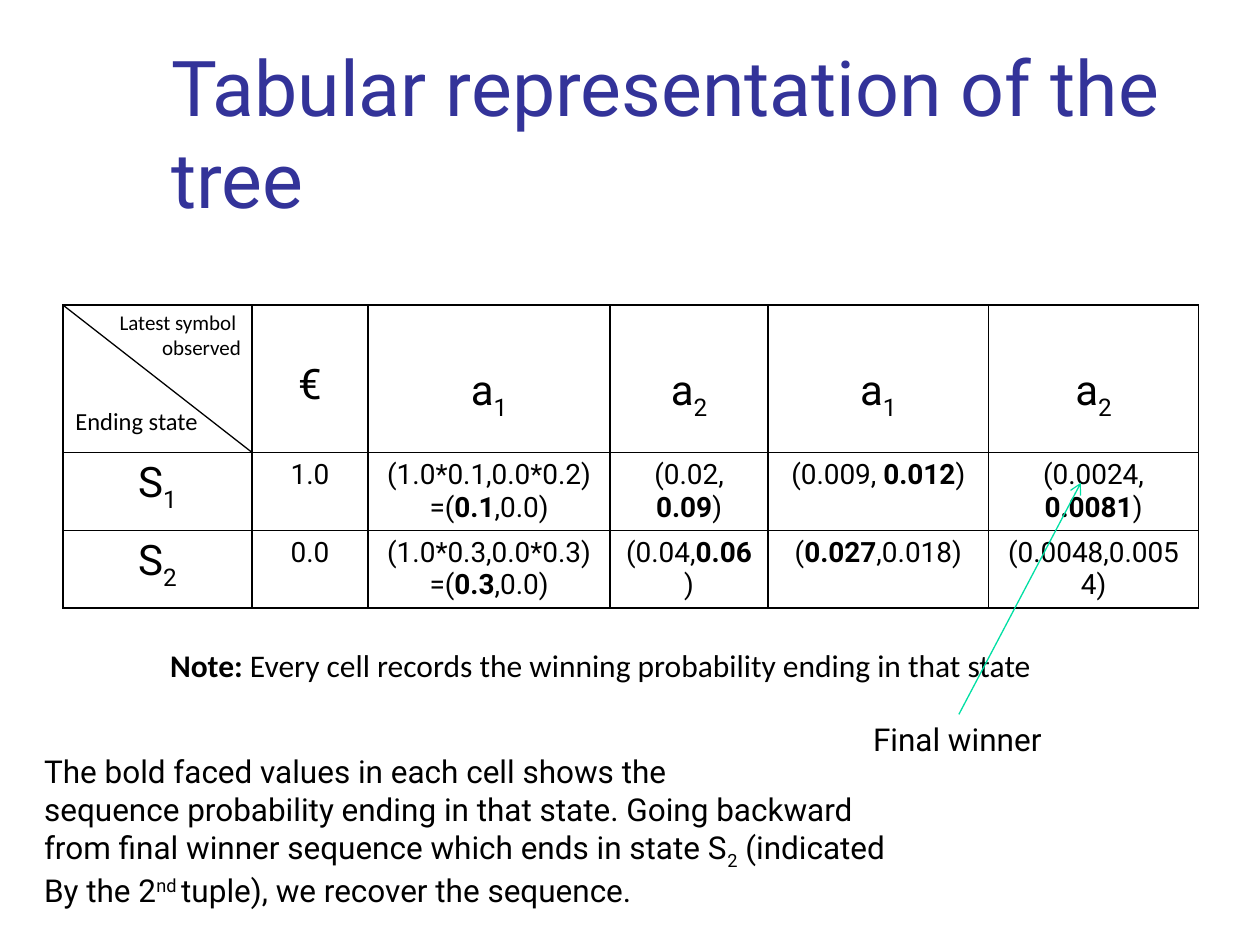
from pptx import Presentation
from pptx.dml.color import RGBColor
from pptx.enum.shapes import MSO_CONNECTOR
from pptx.enum.text import MSO_ANCHOR, MSO_AUTO_SIZE, PP_ALIGN
from pptx.oxml import parse_xml
from pptx.oxml.ns import nsdecls
from pptx.util import Cm, Pt

COLORS = {"title": "333399", "ink": "000000", "arrow": "00DFA4"}
BASELINES = {"sub": "-25000", "super": "30000"}

TITLE = {"name": "Roboto", "size": Pt(44)}
SYMBOL = {"name": "Roboto", "size": Pt(24)}
VALUE = {"name": "Roboto", "size": Pt(16)}
BODY = {"name": "Roboto", "size": Pt(18)}
NOTE = {"name": "Calibri", "size": Pt(18)}
STATE_LABEL = {"name": "Calibri", "size": Pt(14)}
SYMBOL_LABEL = {"name": "Calibri", "size": Pt(12)}

# A paragraph is a list of (text, style) runs; style is "", "bold", "sub" or "super"
HEADER = [[("€", "")]] + [[("a", ""), (n, "sub")] for n in "1212"]
STATES = [
    ("1", [
        [("1.0", "")],
        [("(1.0*0.1,0.0*0.2)=(", ""), ("0.1", "bold"), (",0.0)", "")],
        [("(0.02, ", ""), ("0.09", "bold"), (")", "")],
        [("(0.009, ", ""), ("0.012", "bold"), (")", "")],
        [("(0.0024, ", ""), ("0.0081", "bold"), (")", "")],
    ]),
    ("2", [
        [("0.0", "")],
        [("(1.0*0.3,0.0*0.3)=(", ""), ("0.3", "bold"), (",0.0)", "")],
        [("(0.04,", ""), ("0.06", "bold"), (")", "")],
        [("(", ""), ("0.027", "bold"), (",0.018)", "")],
        [("(0.0048,0.0054)", "")],
    ]),
]
EXPLANATION = [
    [("The bold faced values in each cell shows the", "")],
    [("sequence probability ending in that state. Going backward", "")],
    [("from final winner sequence which ends in state S", ""),
     ("2", "sub"), (" (indicated", "")],
    [("By the 2", ""), ("nd ", "super"), ("tuple), we recover the sequence.", "")],
]
COLUMN_WIDTHS = [3.81, 2.34, 4.88, 3.18, 4.45, 4.23]
ROW_HEIGHTS = [2.97, 1.57, 1.57]


def write(frame, paragraphs, font, color="ink", **layout):
    for i, runs in enumerate(paragraphs):
        paragraph = frame.paragraphs[0] if i == 0 else frame.add_paragraph()
        for key, value in layout.items():
            setattr(paragraph, key, value)
        for text, style in runs:
            run = paragraph.add_run()
            run.text = text
            for key, value in font.items():
                setattr(run.font, key, value)
            run.font.bold = style == "bold"
            run.font.color.rgb = RGBColor.from_string(COLORS[color])
            if style in BASELINES:
                run._r.get_or_add_rPr().set("baseline", BASELINES[style])


def add_text(slide, box, paragraphs, font, wrap=False, **layout):
    frame = slide.shapes.add_textbox(*(Cm(v) for v in box)).text_frame
    frame.word_wrap = wrap
    frame.auto_size = MSO_AUTO_SIZE.SHAPE_TO_FIT_TEXT
    write(frame, paragraphs, font, **layout)
    return frame


def add_line(slide, start, end, color, arrow=False):
    line = slide.shapes.add_connector(
        MSO_CONNECTOR.STRAIGHT, *(Cm(v) for v in (*start, *end)))
    line.line.color.rgb = RGBColor.from_string(COLORS[color])
    line.line.width = Pt(0.75)
    if arrow:
        line.line._get_or_add_ln().append(
            parse_xml(f'<a:tailEnd {nsdecls("a")} type="arrow"/>'))
    line._element.spPr.append(parse_xml(f'<a:effectLst {nsdecls("a")}/>'))


def style_cell(cell):
    properties = cell._tc.get_or_add_tcPr()
    for side in ("lnL", "lnR", "lnT", "lnB"):
        properties.append(parse_xml(
            f'<a:{side} {nsdecls("a")} w="12700"><a:solidFill>'
            f'<a:srgbClr val="{COLORS["ink"]}"/></a:solidFill></a:{side}>'))
    cell.fill.background()


def add_title(slide, box):
    frame = add_text(slide, box, [[("Tabular representation of the tree", "")]],
                     TITLE, wrap=True, color="title")
    frame.auto_size = MSO_AUTO_SIZE.NONE
    frame.vertical_anchor = MSO_ANCHOR.BOTTOM


def add_probability_table(slide, left, top):
    table = slide.shapes.add_table(
        len(ROW_HEIGHTS), len(COLUMN_WIDTHS), Cm(left), Cm(top),
        Cm(sum(COLUMN_WIDTHS)), Cm(sum(ROW_HEIGHTS))).table
    table.first_row = table.horz_banding = False
    for column, width in zip(table.columns, COLUMN_WIDTHS):
        column.width = Cm(width)
    for row, height in zip(table.rows, ROW_HEIGHTS):
        row.height = Cm(height)
    for cell in table.iter_cells():
        style_cell(cell)

    # Observed symbols, then one row per ending state
    for c, symbol in enumerate(HEADER, start=1):
        write(table.cell(0, c).text_frame, [symbol], SYMBOL,
              alignment=PP_ALIGN.CENTER, line_spacing=2.0)
    for r, (number, values) in enumerate(STATES, start=1):
        write(table.cell(r, 0).text_frame, [[("S", ""), (number, "sub")]],
              SYMBOL, alignment=PP_ALIGN.CENTER)
        for c, value in enumerate(values, start=1):
            write(table.cell(r, c).text_frame, [value], VALUE,
                  alignment=PP_ALIGN.CENTER)

    # Split corner cell
    add_text(slide, (left, top + 1.91, 3.02, 0.86),
             [[("Ending state", "")]], STATE_LABEL)
    add_line(slide, (left, top),
             (left + COLUMN_WIDTHS[0], top + ROW_HEIGHTS[0]), "ink")
    add_text(slide, (left + 0.84, top - 0.03, 3, 1.3),
             [[("Latest symbol ", "")], [("observed", "")]],
             SYMBOL_LABEL, alignment=PP_ALIGN.RIGHT)


def add_note(slide, box):
    add_text(slide, box, [[
        ("Note:", "bold"),
        (" Every cell records the winning probability ending in that state", ""),
    ]], NOTE, wrap=True)


def add_final_winner(slide, box):
    left, top, width, _ = box
    add_text(slide, box, [[("Final winner", "")]], BODY)
    middle = left + width / 2
    add_line(slide, (middle, top), (middle + 2.46, top - 4.67), "arrow", arrow=True)


def add_explanation(slide, box):
    add_text(slide, box, EXPLANATION, BODY)


def main():
    deck = Presentation()
    deck.slide_width, deck.slide_height = Cm(25.4), Cm(19.05)
    slide = deck.slides.add_slide(deck.slide_layouts[6])
    add_title(slide, (3.2, 0.58, 21.64, 4.06))
    add_probability_table(slide, 1.27, 6.15)
    add_note(slide, (3.18, 12.9, 19.89, 1.02))
    add_final_winner(slide, (17.35, 14.4, 3.96, 1.02))
    add_explanation(slide, (0.64, 15.04, 17.91, 3.33))
    deck.save("out.pptx")


if __name__ == "__main__":
    main()
